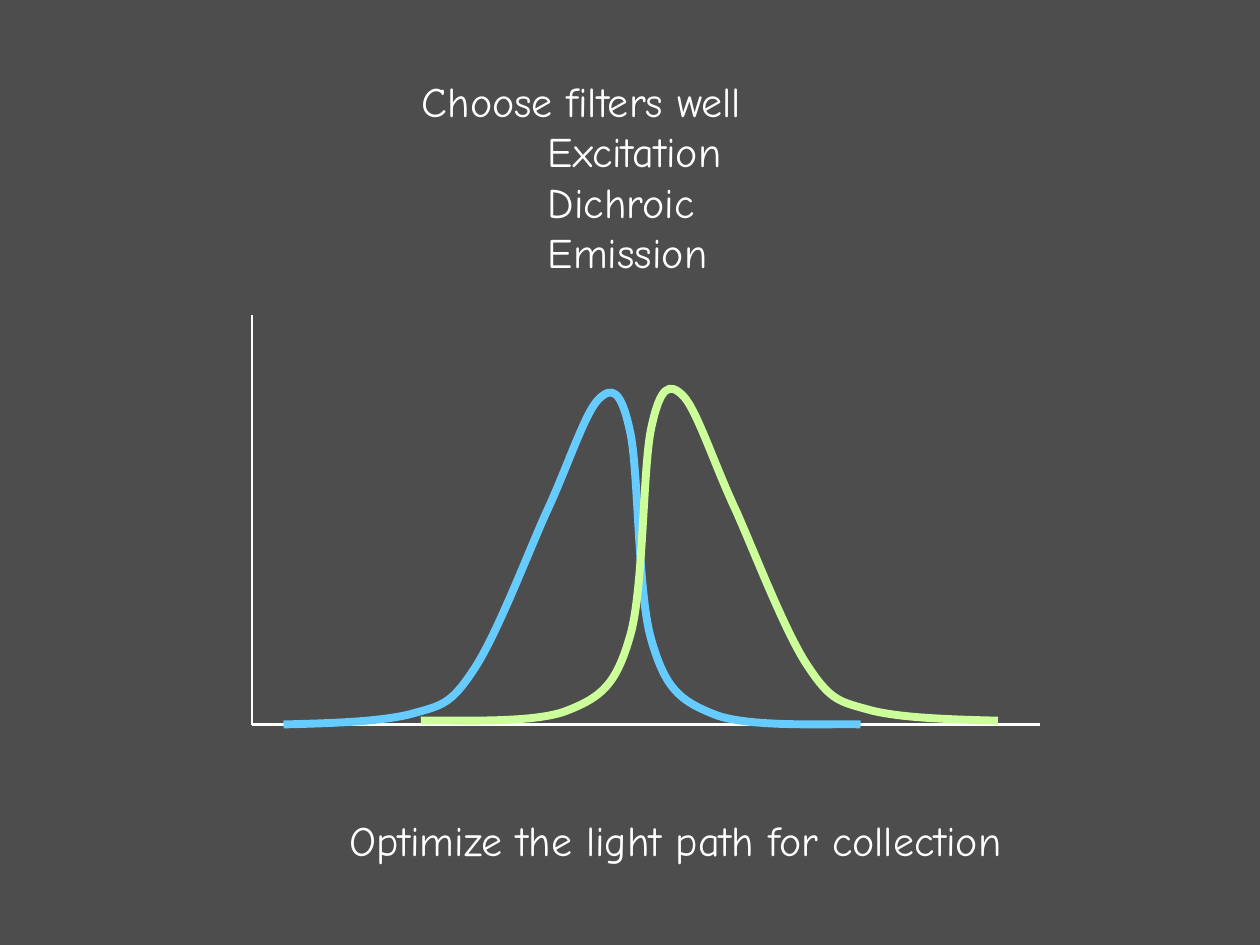
from dataclasses import dataclass

from lxml.etree import SubElement
from pptx import Presentation
from pptx.dml.color import RGBColor
from pptx.enum.shapes import MSO_CONNECTOR
from pptx.enum.text import MSO_ANCHOR, PP_ALIGN
from pptx.oxml.ns import qn
from pptx.util import Inches, Pt


@dataclass(frozen=True)
class Theme:
    background: RGBColor = RGBColor(0x4D, 0x4D, 0x4D)
    text: RGBColor = RGBColor(0xFF, 0xFF, 0xFF)
    excitation: RGBColor = RGBColor(0x66, 0xCC, 0xFF)
    emission: RGBColor = RGBColor(0xCC, 0xFF, 0x99)
    font: str = "Comic Neue"
    size: Pt = Pt(24)
    axis_width: Pt = Pt(1.5)
    curve_width: Pt = Pt(4.5)
    tab: Inches = Inches(1)


class SlideBuilder:
    def __init__(self, s, theme):
        self.s, self.theme = s, theme
        s.background.fill.solid()
        s.background.fill.fore_color.rgb = theme.background
        self.plot = s.shapes.add_group_shape().shapes

    def axis(self, start, end):
        x1, y1, x2, y2 = (Inches(v) for v in (*start, *end))
        line = self.plot.add_connector(MSO_CONNECTOR.STRAIGHT, x1, y1, x2, y2)
        line.line.color.rgb = self.theme.text
        line.line.width = self.theme.axis_width
        SubElement(line._element.spPr, qn("a:effectLst"))

    def curve(self, points, color):
        """Draw a start point followed by three Bezier points per segment."""
        first, *rest = [(Inches(x), Inches(y)) for x, y in points]
        builder = self.plot.build_freeform(*first)
        builder.add_line_segments(rest, close=False)
        sp = builder.convert_to_shape()
        # Turn every three straight steps into one cubic segment
        outline = next(sp._element.iter(qn("a:path")))
        steps = outline.findall(qn("a:lnTo"))
        for i in range(0, len(steps), 3):
            cubic = SubElement(outline, qn("a:cubicBezTo"))
            for step in steps[i:i + 3]:
                cubic.append(step[0])
                outline.remove(step)
        sp.shadow.inherit = False
        sp.fill.background()
        sp.line.color.rgb = color
        sp.line.width = self.theme.curve_width

    def text(self, box, lines, align=PP_ALIGN.LEFT):
        tf = self.s.shapes.add_textbox(*(Inches(v) for v in box)).text_frame
        tf.word_wrap = True
        tf.vertical_anchor = MSO_ANCHOR.MIDDLE
        font_format = {"name": self.theme.font, "size": self.theme.size}
        for i, line in enumerate(lines):
            p = tf.add_paragraph() if i else tf.paragraphs[0]
            p.alignment = align
            if line.startswith("\t"):
                stops = SubElement(p._p.get_or_add_pPr(), qn("a:tabLst"))
                SubElement(stops, qn("a:tab"), pos=str(self.theme.tab), algn="l")
            r = p.add_run()
            r.text = line
            for name, value in font_format.items():
                setattr(r.font, name, value)
            r.font.color.rgb = self.theme.text


# Excitation spectrum: start point, then one cubic segment per row, in inches
SPECTRUM = [
    (2.25, 5.75),
    (2.62, 5.74), (3, 5.73), (3.25, 5.67),
    (3.5, 5.6), (3.57, 5.6), (3.75, 5.33),
    (3.93, 5.07), (4.17, 4.44), (4.33, 4.08),
    (4.5, 3.72), (4.64, 3.28), (4.75, 3.17),
    (4.86, 3.06), (4.93, 3.1), (5, 3.42),
    (5.07, 3.73), (5.06, 4.71), (5.17, 5.08),
    (5.28, 5.46), (5.39, 5.56), (5.67, 5.67),
    (5.94, 5.78), (6.64, 5.74), (6.83, 5.75),
]
MIRROR_SUM = 10.17  # x of a point plus x of its mirror image
EMISSION_RISE = 0.03


def main():
    prs = Presentation()
    prs.slide_width, prs.slide_height = Inches(10), Inches(7.5)
    theme = Theme()
    slide = SlideBuilder(prs.slides.add_slide(prs.slide_layouts[6]), theme)

    # Axes
    origin = (2, 5.75)
    slide.axis((2, 2.5), origin)
    slide.axis(origin, (8.25, 5.75))

    # Spectra: emission mirrors excitation
    emission = [(MIRROR_SUM - x, y - EMISSION_RISE) for x, y in SPECTRUM]
    slide.curve(SPECTRUM, theme.excitation)
    slide.curve(emission, theme.emission)

    # Text
    filters = ["Excitation", "Dichroic", "Emission"]
    slide.text((3.25, 0.42, 3.2, 1.96),
               ["Choose filters well"] + [f"\t{name}" for name in filters])
    slide.text((2.34, 6.38, 6.04, 0.57),
               ["Optimize the light path for collection"], PP_ALIGN.CENTER)

    prs.save("out.pptx")


if __name__ == "__main__":
    main()
